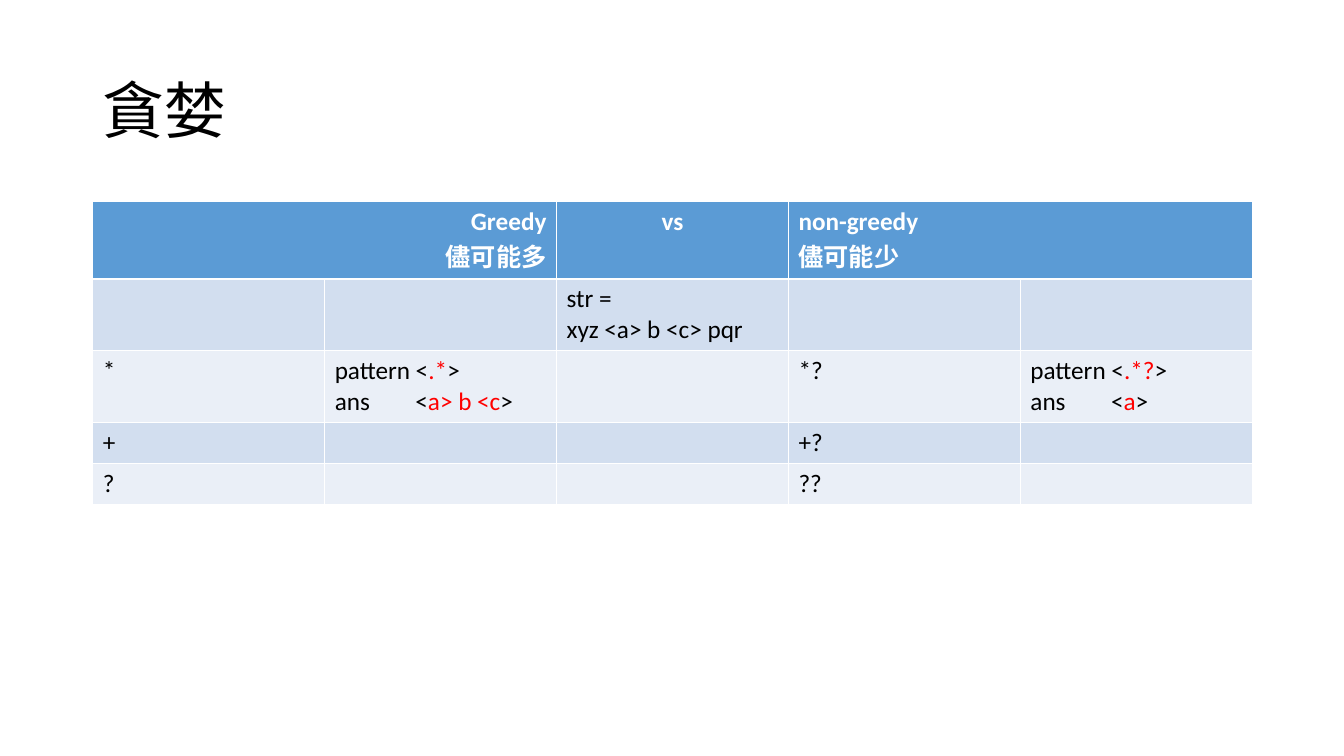
from pptx import Presentation
from pptx.dml.color import RGBColor
from pptx.enum.text import MSO_ANCHOR as ANCHOR, MSO_AUTO_SIZE as AUTO, PP_ALIGN as ALIGN
from pptx.util import Inches, Pt
from lxml.etree import SubElement

WHITE = RGBColor(0xFF, 0xFF, 0xFF)
BLACK = RGBColor(0, 0, 0)
RED = RGBColor(0xFF, 0, 0)
HEADER = RGBColor(0x5B, 0x9B, 0xD5)
BANDS = [RGBColor(0xEA, 0xEF, 0xF7), RGBColor(0xD2, 0xDE, 0xEF)]
NS = "{http://schemas.openxmlformats.org/drawingml/2006/main}"
LEFT, COL_W = 0.92, 2.3
ROW_H = [0.7, 0.7, 0.7, 0.41, 0.41]


def write(tf, text, size=18, color=BLACK, bold=False, align=ALIGN.LEFT, spacing=None):
    for i, line in enumerate(text.split("\n")):
        p = tf.add_paragraph() if i else tf.paragraphs[0]
        p.alignment = align
        p.line_spacing = spacing
        if "\t" in line:
            tabs = SubElement(p._p.get_or_add_pPr(), NS + "tabLst")
            SubElement(tabs, NS + "tab", pos=str(Inches(0.8)), algn="l")
        for j, part in enumerate(line.split("|")):
            for k, piece in enumerate(part.split("\v")):
                if k:
                    p.add_line_break()
                r = p.add_run()
                r.text = piece
                r.font.name = "Calibri"
                r.font.size = Pt(size)
                r.font.bold = bold
                r.font.color.rgb = RED if j % 2 else color


prs = Presentation()
prs.slide_width, prs.slide_height = Inches(13.33), Inches(7.5)
s = prs.slides.add_slide(prs.slide_layouts[5])

title = s.shapes.title
title.left, title.top = Inches(LEFT), Inches(0.4)
title.width, title.height = Inches(5 * COL_W), Inches(1.45)
tf = title.text_frame
tf.auto_size = AUTO.NONE
tf.vertical_anchor = ANCHOR.MIDDLE
write(tf, "貪婪", size=44, spacing=0.9)

rows = [
    ["Greedy\n儘可能多", "", "vs", "non-greedy\n儘可能少", ""],
    ["", "", "str = \vxyz <a> b <c> pqr", "", ""],
    ["*", "pattern <|.*|>\nans\t<|a> b <c|>", "", "*?", "pattern <|.*?|>\nans\t<|a|>"],
    ["+", "", "", "+?", ""],
    ["?", "", "", "??", ""],
]
header_align = {0: ALIGN.RIGHT, 2: ALIGN.CENTER}

table = s.shapes.add_table(5, 5, Inches(LEFT), Inches(2), Inches(5 * COL_W), Inches(sum(ROW_H))).table
for col in table.columns:
    col.width = Inches(COL_W)
for start in (0, 3):
    table.cell(0, start).merge(table.cell(0, start + 1))

for i, row in enumerate(rows):
    table.rows[i].height = Inches(ROW_H[i])
    for j, text in enumerate(row):
        cell = table.cell(i, j)
        cell.fill.solid()
        cell.fill.fore_color.rgb = BANDS[i % 2] if i else HEADER
        if not text:
            continue
        if i:
            write(cell.text_frame, text)
        else:
            write(cell.text_frame, text, color=WHITE, bold=True, align=header_align.get(j, ALIGN.LEFT))

prs.save("out.pptx")
